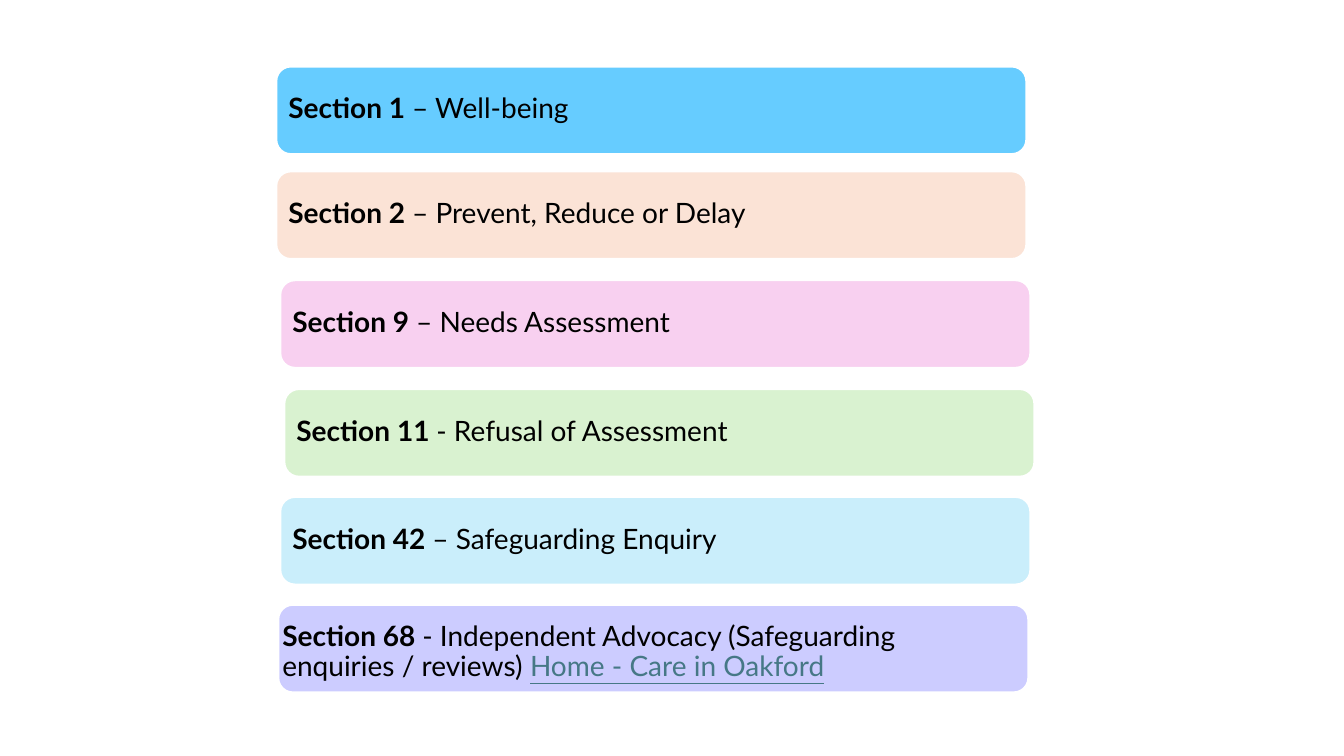
"""Build a slide listing six sections as coloured rounded bars."""
import pptx
import pptx.dml.color
import pptx.enum.shapes
import pptx.enum.text
import pptx.util

RGBColor = pptx.dml.color.RGBColor
WHITE = RGBColor(0xFF, 0xFF, 0xFF)
BLACK = RGBColor(0x00, 0x00, 0x00)
TEAL = RGBColor(0x46, 0x78, 0x86)
SKY = RGBColor(0x66, 0xCC, 0xFF)
PEACH = RGBColor(0xFB, 0xE3, 0xD6)
PINK = RGBColor(0xF8, 0xD0, 0xF0)
GREEN = RGBColor(0xD9, 0xF2, 0xD0)
PALE_BLUE = RGBColor(0xCA, 0xEE, 0xFB)
LAVENDER = RGBColor(0xCC, 0xCC, 0xFF)

EMU_PER_PX = 9144
BAR_WIDTH, BAR_HEIGHT = 744, 87
TEXT_WIDTH, TEXT_HEIGHT = 736, 78
TEXT_INSET = 8

SECTIONS = [
    (274, 66, SKY, "Section 1 ", "– Well-being"),
    (274, 170, PEACH, "Section 2 ", "– Prevent, Reduce or Delay"),
    (278, 278, PINK, "Section 9 ", "– Needs Assessment"),
    (282, 386, GREEN, "Section 11 ", "- Refusal of Assessment"),
    (278, 493, PALE_BLUE, "Section 42 ", "– Safeguarding Enquiry"),
    (276, 600, LAVENDER, "Section 68 ",
     "- Independent Advocacy (Safeguarding enquiries / reviews) "),
]


def px(length):
    """Turn whole pixels into EMU."""
    return pptx.util.Emu(length * EMU_PER_PX)


def add_bar(slide, left, top, color):
    """Add one rounded bar with a white outline."""
    shape = slide.shapes.add_shape(
        pptx.enum.shapes.MSO_SHAPE.ROUNDED_RECTANGLE,
        px(left), px(top), px(BAR_WIDTH), px(BAR_HEIGHT))
    shape.shadow.inherit = False
    shape.fill.solid()
    shape.fill.fore_color.rgb = color
    shape.line.color.rgb = WHITE
    shape.line.width = pptx.util.Pt(1.5)


def add_label(slide, left, top):
    """Add a middle-anchored text box and return its paragraph."""
    shape = slide.shapes.add_textbox(
        px(left), px(top), px(TEXT_WIDTH), px(TEXT_HEIGHT))
    frame = shape.text_frame
    frame.word_wrap = True
    frame.vertical_anchor = pptx.enum.text.MSO_ANCHOR.MIDDLE
    frame.margin_left = frame.margin_right = px(TEXT_INSET)
    frame.margin_top = frame.margin_bottom = px(TEXT_INSET)
    paragraph = frame.paragraphs[0]
    paragraph.line_spacing = 0.9
    return paragraph


def add_text(paragraph, text, size=20, color=BLACK, bold=False, underline=False):
    """Append formatted text to a paragraph."""
    run = paragraph.add_run()
    run.text = text
    run.font.name = "Lato"
    run.font.size = pptx.util.Pt(size)
    run.font.color.rgb = color
    run.font.bold = bold
    run.font.underline = underline


def main():
    """Build and save the presentation."""
    presentation = pptx.Presentation()
    presentation.slide_width = px(1333)
    presentation.slide_height = px(750)
    slide = presentation.slides.add_slide(presentation.slide_layouts[6])
    for left, top, color, section, topic in SECTIONS:
        is_advocacy = color == LAVENDER
        shift_x, shift_y = (-4, 8) if is_advocacy else (4, 4)
        add_bar(slide, left, top, color)
        paragraph = add_label(slide, left + shift_x, top + shift_y)
        add_text(paragraph, section, bold=True)
        add_text(paragraph, topic)
        if is_advocacy:
            add_text(paragraph, "Home - Care in Oakford", color=TEAL, underline=True)
    presentation.save("out.pptx")


if __name__ == "__main__":
    main()
